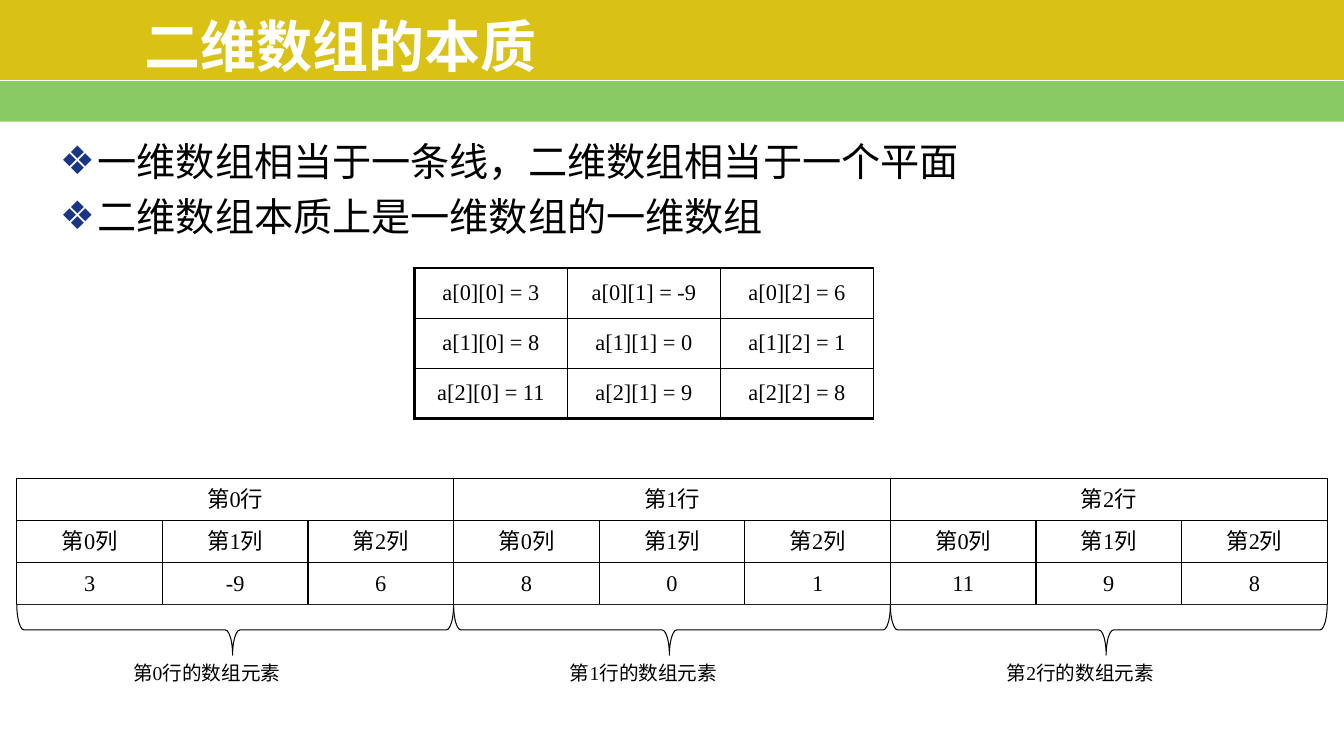
from lxml import etree
from pptx import Presentation
from pptx.dml.color import RGBColor
from pptx.enum.shapes import MSO_CONNECTOR, MSO_SHAPE
from pptx.enum.text import MSO_ANCHOR, MSO_AUTO_SIZE, PP_ALIGN
from pptx.oxml.ns import qn
from pptx.util import Pt

LEFT, CENTER, JUSTIFY = PP_ALIGN.LEFT, PP_ALIGN.CENTER, PP_ALIGN.JUSTIFY
MIDDLE, TOP = MSO_ANCHOR.MIDDLE, MSO_ANCHOR.TOP
RECTANGLE, BRACE = MSO_SHAPE.RECTANGLE, MSO_SHAPE.RIGHT_BRACE

TITLE = "二维数组的本质"
POINTS = [
    "一维数组相当于一条线，二维数组相当于一个平面",
    "二维数组本质上是一维数组的一维数组",
]
ARRAY = [[3, -9, 6], [8, 0, 1], [11, 9, 8]]

CJK_FONT, LATIN_FONT = "Noto Sans CJK SC", "Times New Roman"
GOLD, GREEN, NAVY = "D9C215", "89CA64", "193583"
WHITE, BLACK = "FFFFFF", "000000"

PAGE_W, PAGE_H = 960, 540
GOLD_H, GREEN_H, RULE_Y = 57, 30, 57.5
TABLE_X, TABLE_Y, TABLE_COL_W, TABLE_ROW_H = 296, 191.5, 109.33, 35.75
STRIP_X, STRIP_Y, CELL_W, CELL_H = 12, 342, 104, 30
BRACE_H, LABEL_X, LABEL_W, LABEL_H = 36, 76, 120, 24
THIN, THICK = 1, 2.25


def color(value):
    return RGBColor.from_string(value)


def place(shape, x, y, width, height):
    shape.left, shape.top = Pt(x), Pt(y)
    shape.width, shape.height = Pt(width), Pt(height)


def format_para(para, size, align, line=None, latin=LATIN_FONT, ink=BLACK, bold=False):
    para.alignment = align
    if line:
        para.line_spacing = Pt(line)
    for span in para.runs:
        font = span.font
        font.size, font.bold, font.name = Pt(size), bold, latin
        font.color.rgb = color(ink)
        east_asian = etree.Element(qn("a:ea"), typeface=CJK_FONT)
        font.fill  # colour comes before the typefaces
        span.font._element.find(qn("a:latin")).addnext(east_asian)


def add_bullet(para):
    props = para._p.get_or_add_pPr()
    props.set("marL", str(Pt(27)))
    props.set("indent", str(-Pt(27)))
    bullet_color = etree.SubElement(props, qn("a:buClr"))
    etree.SubElement(bullet_color, qn("a:srgbClr"), val=NAVY)
    etree.SubElement(props, qn("a:buChar"), char="❖")


def add_block(shapes, kind, x, y, width, height, fill, line=None):
    block = shapes.add_shape(kind, Pt(x), Pt(y), Pt(width), Pt(height))
    block.shadow.inherit = False
    block.fill.solid()
    block.fill.fore_color.rgb = color(fill)
    if line:
        block.line.color.rgb = color(line)
        block.line.width = Pt(0.75)
    else:
        block.line.fill.background()
    return block


def add_strip_cell(shapes, x, y, width, text):
    box = add_block(shapes, RECTANGLE, x, y, width, CELL_H, WHITE, BLACK)
    frame = box.text_frame
    frame.text, frame.vertical_anchor = text, MIDDLE
    format_para(frame.paragraphs[0], 16, CENTER, line=18)


def border_cell(cell, left, top, right, bottom):
    props = cell._tc.get_or_add_tcPr()
    sides = zip(("a:lnL", "a:lnR", "a:lnT", "a:lnB"), (left, right, top, bottom))
    for index, (tag, width) in enumerate(sides):
        edge = etree.Element(qn(tag), w=str(Pt(width)))
        fill = etree.SubElement(edge, qn("a:solidFill"))
        etree.SubElement(fill, qn("a:srgbClr"), val=BLACK)
        props.insert(index, edge)


def add_header(page):
    add_block(page.shapes, RECTANGLE, 0, GOLD_H, PAGE_W, GREEN_H, GREEN)
    add_block(page.shapes, RECTANGLE, 0, 0, PAGE_W, GOLD_H, GOLD)
    rule = page.shapes.add_connector(
        MSO_CONNECTOR.STRAIGHT, 0, Pt(RULE_Y), Pt(PAGE_W), Pt(RULE_Y))
    rule.line.color.rgb = color(WHITE)
    rule.line.width = Pt(1)
    etree.SubElement(rule.element.spPr, qn("a:effectLst"))


def fill_placeholders(page):
    title, body = page.shapes.title, page.placeholders[1]
    for holder in (title, body):  # bring in front of the header bands
        holder.element.getparent().append(holder.element)
        holder.text_frame.auto_size = MSO_AUTO_SIZE.NONE
    place(title, 96, 13.5, 760, 38)
    title.text_frame.text = TITLE
    title.text_frame.vertical_anchor = MIDDLE
    format_para(title.text_frame.paragraphs[0], 40, LEFT,
                latin=CJK_FONT, ink=WHITE, bold=True)

    place(body, 35.5, 94, 896, 412)
    frame = body.text_frame
    frame.vertical_anchor = TOP
    frame.text = "\n".join(POINTS)
    for index, para in enumerate(frame.paragraphs):
        add_bullet(para)
        format_para(para, 28, JUSTIFY, line=34)
        para.space_before = Pt(5.6 if index else 0)


def add_array_table(page):
    rows, cols = len(ARRAY), len(ARRAY[0])
    table = page.shapes.add_table(
        rows, cols, Pt(TABLE_X), Pt(TABLE_Y),
        Pt(cols * TABLE_COL_W), Pt(rows * TABLE_ROW_H)).table
    table.first_row = table.horz_banding = False
    for r, values in enumerate(ARRAY):
        for c, value in enumerate(values):
            cell = table.cell(r, c)
            cell.text = f"a[{r}][{c}] = {value}"
            cell.fill.background()
            cell.vertical_anchor = MIDDLE
            cell.margin_left = cell.margin_right = 0
            cell.margin_top = cell.margin_bottom = 0
            format_para(cell.text_frame.paragraphs[0], 16, CENTER)
            border_cell(cell, THICK if c == 0 else THIN, THICK if r == 0 else THIN,
                        THIN, THICK if r == rows - 1 else THIN)


def add_memory_strip(page):
    shapes = page.shapes.add_group_shape().shapes
    brace_y = STRIP_Y + 3 * CELL_H
    for r, values in enumerate(ARRAY):
        row_w = len(values) * CELL_W
        row_x = STRIP_X + r * row_w
        add_strip_cell(shapes, row_x, STRIP_Y, row_w, f"第{r}行")
        for c, value in enumerate(values):
            x = row_x + c * CELL_W
            add_strip_cell(shapes, x, STRIP_Y + CELL_H, CELL_W, f"第{c}列")
            add_strip_cell(shapes, x, STRIP_Y + 2 * CELL_H, CELL_W, str(value))

        # The brace is laid out upright, then turned about its centre.
        brace = add_block(shapes, BRACE, row_x + (row_w - BRACE_H) / 2,
                          brace_y + (BRACE_H - row_w) / 2, BRACE_H, row_w, WHITE, BLACK)
        brace.adjustments[0], brace.adjustments[1] = 0.145, 0.506
        brace.rotation = 90

        label = shapes.add_textbox(Pt(row_x + LABEL_X), Pt(brace_y + BRACE_H),
                                   Pt(LABEL_W), Pt(LABEL_H)).text_frame
        label.word_wrap = True
        label.text = f"第{r}行的数组元素"
        format_para(label.paragraphs[0], 14, LEFT, line=17)


def main():
    deck = Presentation()
    deck.slide_width, deck.slide_height = Pt(PAGE_W), Pt(PAGE_H)
    page = deck.slides.add_slide(deck.slide_layouts[1])
    add_header(page)
    fill_placeholders(page)
    add_array_table(page)
    add_memory_strip(page)
    deck.save("out.pptx")


if __name__ == "__main__":
    main()
